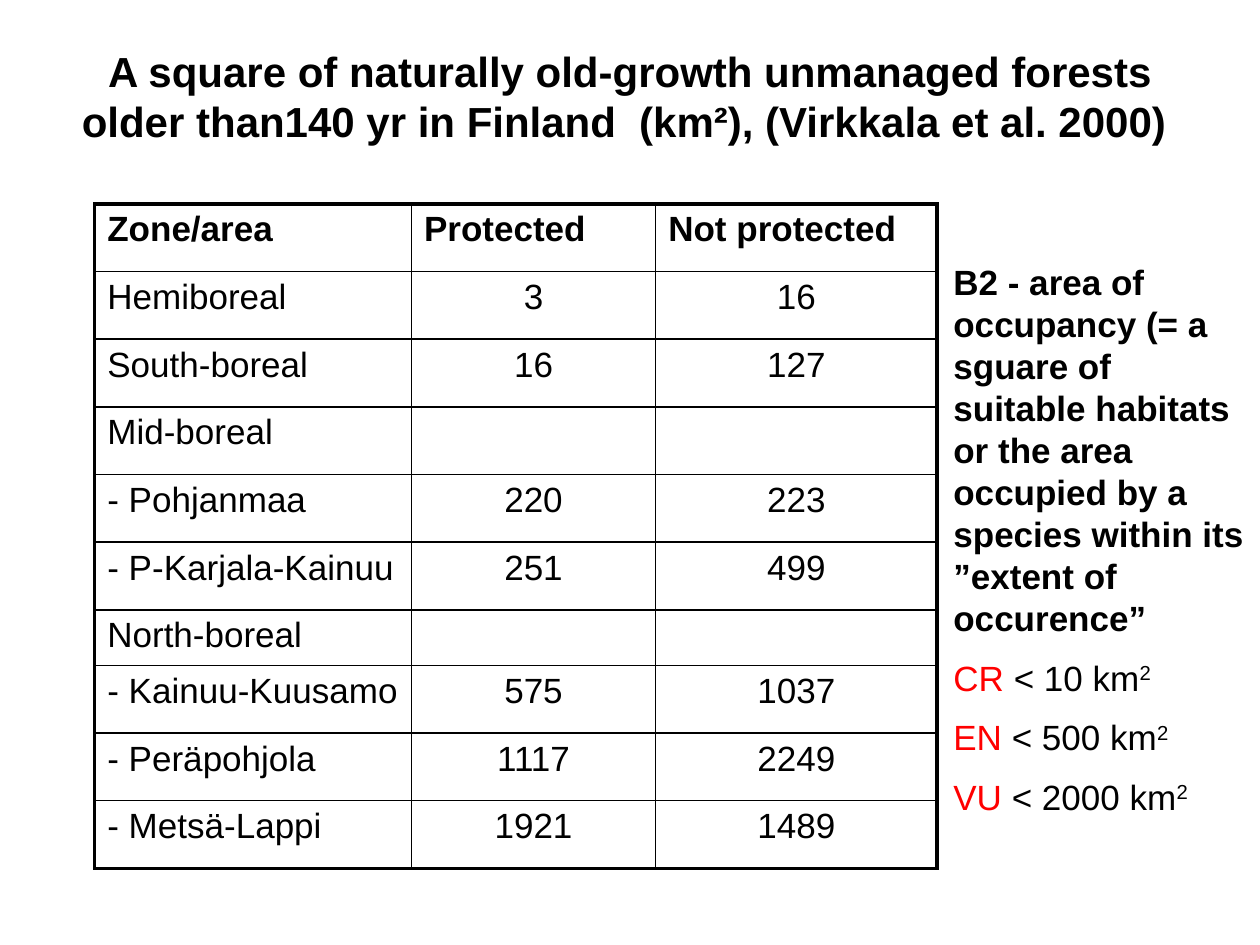
from dataclasses import dataclass

from lxml import etree
from pptx import Presentation
from pptx.dml.color import RGBColor
from pptx.enum.text import MSO_ANCHOR, MSO_AUTO_SIZE, PP_ALIGN
from pptx.oxml.ns import qn
from pptx.util import Cm, Pt

TITLE_ONLY = 5
LEFT, CENTER = PP_ALIGN.LEFT, PP_ALIGN.CENTER
MIDDLE = MSO_ANCHOR.MIDDLE
FIXED, GROW = MSO_AUTO_SIZE.NONE, MSO_AUTO_SIZE.SHAPE_TO_FIT_TEXT


@dataclass(frozen=True)
class Theme:
    font: str = "Arial"
    ink: str = "000000"
    category: str = "FF0000"
    title_size: int = 24
    body_size: int = 20
    frame_line: float = 2.25
    grid_line: float = 1
    criterion_gap: int = 10


THEME = Theme()

HEADING = (
    "A square of naturally old-growth unmanaged forests older than140 yr "
    "in Finland  (km²), (Virkkala et al. 2000) "
)
FOREST_AREAS = [
    ("Zone/area", "Protected", "Not protected"),
    ("Hemiboreal", "3", "16"),
    ("South-boreal", "16", "127"),
    ("Mid-boreal", "", ""),
    ("- Pohjanmaa", "220", "223"),
    ("- P-Karjala-Kainuu", "251", "499"),
    ("North-boreal", "", ""),
    ("- Kainuu-Kuusamo", "575", "1037"),
    ("- Peräpohjola", "1117", "2249"),
    ("- Metsä-Lappi", "1921", "1489"),
]
COLUMN_SHARES = (0.376, 0.29, 0.334)
SHORT_ROW, SHORT_ROW_HEIGHT = 6, Cm(1.04)
CRITERION = (
    "B2 - area of occupancy (= a sguare of suitable habitats or the area "
    "occupied by a species within its ”extent of occurence”"
)
THRESHOLDS = [("CR ", "< 10 km"), ("EN", " < 500 km"), ("VU", " < 2000 km")]


def add_run(paragraph, text, size=THEME.body_size, color=THEME.ink, bold=False):
    run = paragraph.add_run()
    run.text = text
    run.font.name = THEME.font
    run.font.size = Pt(size)
    run.font.bold = bold
    run.font.color.rgb = RGBColor.from_string(color)
    return run


def set_borders(cell, widths):
    properties = cell._tc.get_or_add_tcPr()
    for side, width in widths.items():
        line = etree.SubElement(properties, qn(f"a:ln{side}"), w=str(Pt(width)))
        fill = etree.SubElement(line, qn("a:solidFill"))
        etree.SubElement(fill, qn("a:srgbClr"), val=THEME.ink)


def fill_title(slide, left, top, width, height):
    title = slide.shapes.title
    title.left, title.top, title.width, title.height = left, top, width, height
    frame = title.text_frame
    frame.auto_size = FIXED
    frame.word_wrap = True
    frame.vertical_anchor = MIDDLE
    frame.margin_bottom = Cm(1.1)
    paragraph = frame.paragraphs[0]
    paragraph.alignment = CENTER
    add_run(paragraph, HEADING, THEME.title_size, bold=True)


def add_forest_table(slide, left, top, width, height):
    last_row, last_column = len(FOREST_AREAS) - 1, len(COLUMN_SHARES) - 1
    table = slide.shapes.add_table(
        last_row + 1, last_column + 1, left, top, width, height
    ).table
    table.first_row = table.horz_banding = False
    for column, share in zip(table.columns, COLUMN_SHARES):
        column.width = int(width * share)
    for row in table.rows:
        row.height = (height - SHORT_ROW_HEIGHT) // last_row
    table.rows[SHORT_ROW].height = SHORT_ROW_HEIGHT

    def line_width(on_frame):
        return THEME.frame_line if on_frame else THEME.grid_line

    for r, values in enumerate(FOREST_AREAS):
        for c, value in enumerate(values):
            cell = table.cell(r, c)
            set_borders(cell, {
                "L": line_width(c == 0),
                "R": line_width(c == last_column),
                "T": line_width(r == 0),
                "B": line_width(r == last_row),
            })
            cell.fill.background()
            paragraph = cell.text_frame.paragraphs[0]
            paragraph.font.size = Pt(THEME.body_size)
            paragraph.alignment = CENTER if r and c else LEFT
            if value:
                add_run(paragraph, value, bold=r == 0)


def add_criteria(slide, left, top, width, height):
    frame = slide.shapes.add_textbox(left, top, width, height).text_frame
    frame.word_wrap = True
    frame.auto_size = GROW
    add_run(frame.paragraphs[0], CRITERION, bold=True)
    for category, limit in THRESHOLDS:
        paragraph = frame.add_paragraph()
        paragraph.space_before = Pt(THEME.criterion_gap)
        add_run(paragraph, category, color=THEME.category)
        add_run(paragraph, limit)
        exponent = add_run(paragraph, "2")
        exponent.font._element.set("baseline", "30000")


def main():
    presentation = Presentation()
    presentation.slide_width, presentation.slide_height = Cm(25.4), Cm(19.05)
    slide = presentation.slides.add_slide(presentation.slide_layouts[TITLE_ONLY])
    fill_title(slide, Cm(0.89), Cm(1.52), Cm(23.62), Cm(1.8))
    add_forest_table(slide, Cm(1.91), Cm(4.11), Cm(16.98), Cm(13.32))
    add_criteria(slide, Cm(18.97), Cm(5.13), Cm(6.43), Cm(11.68))
    presentation.save("out.pptx")


if __name__ == "__main__":
    main()
